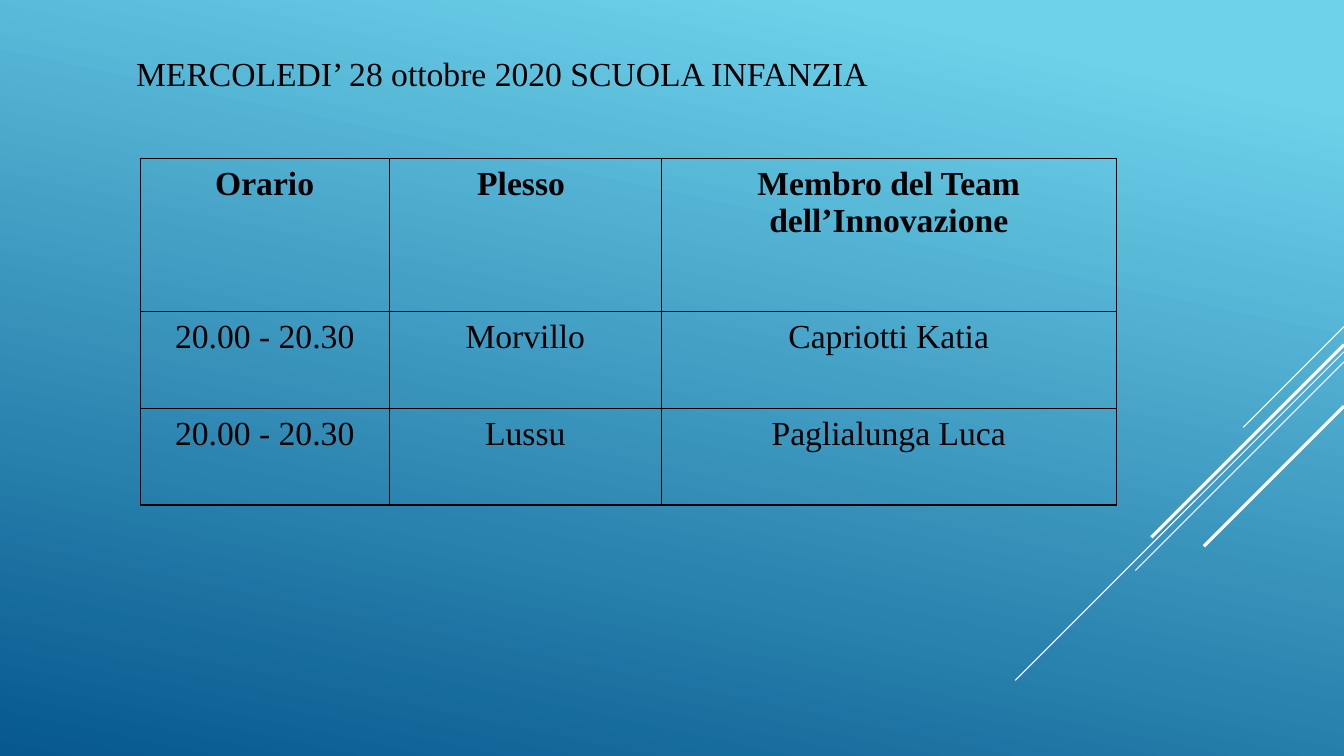
from lxml.etree import SubElement
from pptx import Presentation
from pptx.dml.color import RGBColor
from pptx.enum.shapes import MSO_CONNECTOR
from pptx.enum.text import MSO_ANCHOR, PP_ALIGN
from pptx.oxml import parse_xml
from pptx.oxml.ns import nsdecls, qn
from pptx.util import Inches, Pt

TITLE = "MERCOLEDI’ 28 ottobre 2020 SCUOLA INFANZIA"
ROWS = [
    ("Orario", "Plesso ", "Membro del Team dell’Innovazione"),
    ("20.00 - 20.30", "Morvillo", "Capriotti Katia"),
    ("20.00 - 20.30", "Lussu", "Paglialunga Luca"),
]
COLUMN_WIDTHS = (2.47, 2.7, 4.51)
ROW_HEIGHTS = (1.52, 0.96, 0.96)
# Diagonals: height at the right edge, run to the left (and down), weight
DIAGONALS = [
    (3.24, 1.0, 0.75),
    (3.49, 3.26, 0.75),
    (3.59, 2.07, 0.75),
    (3.42, 1.91, 2.25),
    (4.03, 1.39, 2.25),
]

WIDTH, HEIGHT = 13.33, 7.5
FONT = "Times New Roman"
BLACK = RGBColor(0x00, 0x00, 0x00)
WHITE = RGBColor(0xFF, 0xFF, 0xFF)
SKY = RGBColor(0x6E, 0xD2, 0xEB)
DEEP_BLUE = RGBColor(0x06, 0x58, 0x8E)


def write(frame, text, size=24, bold=False, align=PP_ALIGN.LEFT):
    para = frame.paragraphs[0]
    para.alignment = align
    span = para.add_run()
    span.text = text
    span.font.name = FONT
    span.font.size = Pt(size)
    span.font.bold = bold
    span.font.color.rgb = BLACK


def add_borders(cell):
    properties = cell._tc.get_or_add_tcPr()
    for index, side in enumerate(("lnL", "lnR", "lnT", "lnB")):
        border = parse_xml(
            f'<a:{side} {nsdecls("a")} w="{Pt(1)}"><a:solidFill>'
            f'<a:srgbClr val="{BLACK}"/></a:solidFill></a:{side}>'
        )
        properties.insert(index, border)


deck = Presentation()
deck.slide_width, deck.slide_height = Inches(WIDTH), Inches(HEIGHT)
page = deck.slides.add_slide(deck.slide_layouts[5])

# Background gradient
fill = page.background.fill
fill.gradient()
fill.gradient_angle = 258
for stop, position, color in zip(fill.gradient_stops, (0.1, 1), (SKY, DEEP_BLUE)):
    stop.position = position
    stop.color.rgb = color

# Diagonal lines
for top, run, weight in DIAGONALS:
    diagonal = page.shapes.add_connector(
        MSO_CONNECTOR.STRAIGHT,
        Inches(WIDTH), Inches(top), Inches(WIDTH - run), Inches(top + run),
    )
    diagonal.line.color.rgb = WHITE
    diagonal.line.width = Pt(weight)
    SubElement(diagonal._element.spPr, qn("a:effectLst"))

# Title
title = page.shapes.title
title.left, title.top = Inches(1.25), Inches(0.42)
title.width, title.height = Inches(7.53), Inches(0.6)
title.text_frame.word_wrap = False
title.text_frame.vertical_anchor = MSO_ANCHOR.MIDDLE
write(title.text_frame, TITLE)

# Timetable
table = page.shapes.add_table(
    len(ROWS), len(COLUMN_WIDTHS), Inches(1.39), Inches(1.57),
    Inches(sum(COLUMN_WIDTHS)), Inches(sum(ROW_HEIGHTS)),
).table
table.first_row = table.horz_banding = False
for column, width in zip(table.columns, COLUMN_WIDTHS):
    column.width = Inches(width)
for row, height, texts in zip(table.rows, ROW_HEIGHTS, ROWS):
    row.height = Inches(height)
    for cell, text in zip(row.cells, texts):
        cell.margin_left = cell.margin_right = Inches(0.07)
        cell.margin_top = cell.margin_bottom = Inches(0.07)
        cell.fill.background()
        add_borders(cell)
        write(cell.text_frame, text, bold=texts is ROWS[0], align=PP_ALIGN.CENTER)

deck.save("out.pptx")
